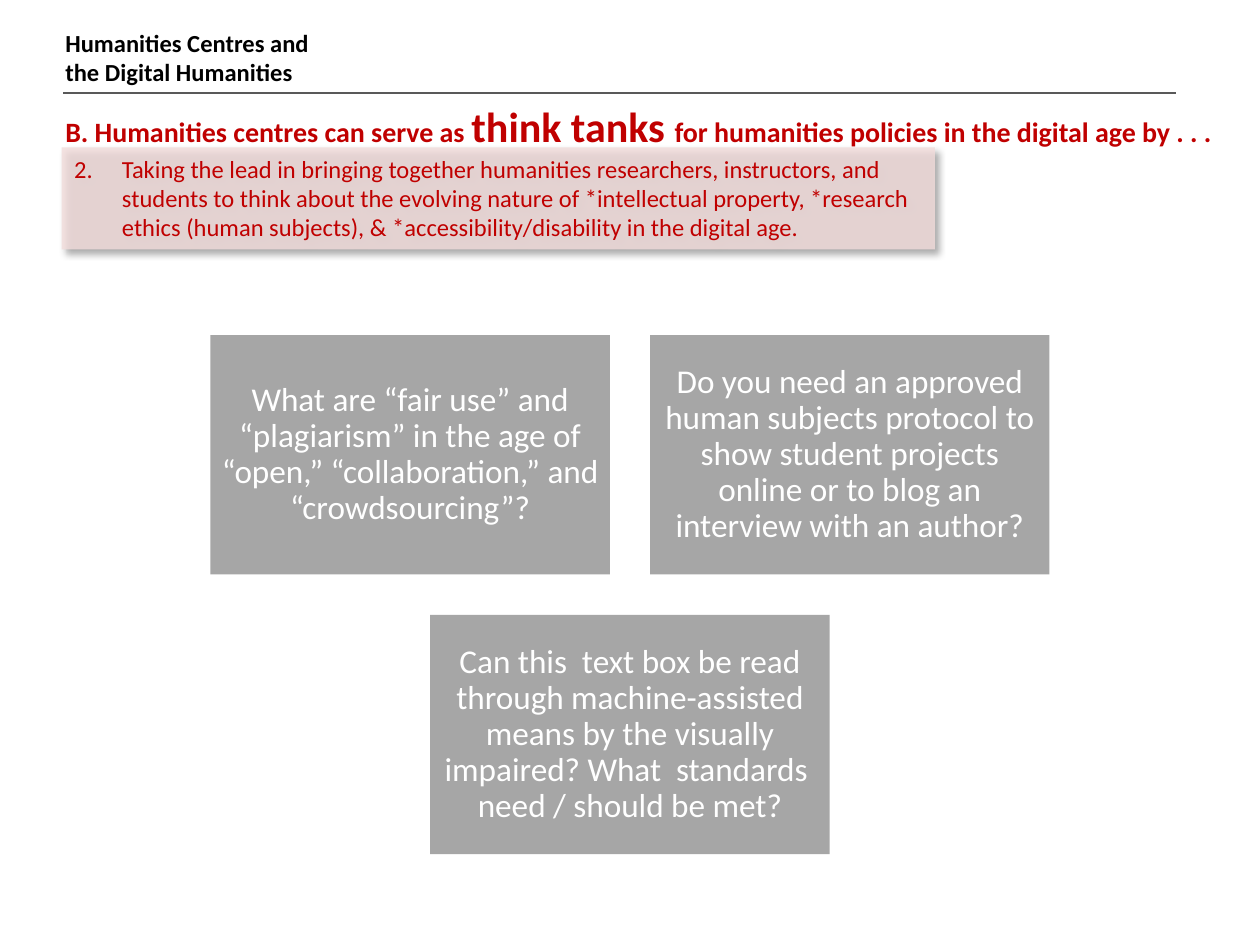
from lxml import etree
from pptx import Presentation
from pptx.dml.color import RGBColor
from pptx.enum.shapes import MSO_CONNECTOR, MSO_SHAPE
from pptx.enum.text import MSO_ANCHOR, MSO_AUTO_SIZE, PP_ALIGN
from pptx.oxml import parse_xml
from pptx.oxml.ns import nsdecls, qn
from pptx.util import Inches, Pt

BLACK, RED, WHITE = "000000", "C00000", "FFFFFF"
PINK, GREY, RULE_GREY = "F2DCDB", "A6A6A6", "595959"


def rgb(color):
    return RGBColor.from_string(color)


def write(shape, paragraphs, color, bold=False, wrap=True, inset=None,
          anchor=MSO_ANCHOR.TOP, align=PP_ALIGN.LEFT, spacing=None):
    """Fill a shape with paragraphs, each a list of (text, point size) runs."""
    frame = shape.text_frame
    frame.word_wrap = wrap
    frame.auto_size = MSO_AUTO_SIZE.NONE
    frame.vertical_anchor = anchor
    if inset is not None:
        frame.margin_left = frame.margin_right = Inches(inset)
        frame.margin_top = frame.margin_bottom = Inches(inset)
    for index, runs in enumerate(paragraphs):
        paragraph = frame.add_paragraph() if index else frame.paragraphs[0]
        paragraph.alignment = align
        paragraph.line_spacing = spacing
        for text, size in runs:
            run = paragraph.add_run()
            run.text = text
            run.font.name = "Calibri"
            run.font.size = Pt(size)
            run.font.bold = bold
            run.font.color.rgb = rgb(color)


prs = Presentation()
prs.slide_width, prs.slide_height = Inches(10), Inches(7.5)
slide = prs.slides.add_slide(prs.slide_layouts[6])
shapes = slide.shapes

# Running header and rule
header = shapes.add_textbox(Inches(0.42), Inches(0.17), Inches(2.19), Inches(0.57))
write(header, [[("Humanities Centres and", 14)], [("the Digital Humanities", 14)]],
      BLACK, bold=True, wrap=False)

rule = shapes.add_connector(MSO_CONNECTOR.STRAIGHT,
                            Inches(0.5), Inches(0.74), Inches(9.33), Inches(0.74))
rule.line.color.rgb = rgb(RULE_GREY)
rule.line.width = Pt(1)
etree.SubElement(rule._element.spPr, qn("a:effectLst"))

# Thesis and numbered point
thesis = shapes.add_textbox(Inches(0.42), Inches(0.75), Inches(9.41), Inches(0.5))
write(thesis, [[("B. Humanities centres can serve as ", 16),
                ("think tanks ", 24),
                ("for humanities policies in the digital age by . . .", 16)]],
      RED, bold=True, wrap=False)

point = shapes.add_shape(MSO_SHAPE.RECTANGLE,
                         Inches(0.49), Inches(1.17), Inches(6.93), Inches(0.81))
point.fill.solid()
point.fill.fore_color.rgb = rgb(PINK)
point.line.fill.background()
fill_color = point._element.spPr.find(".//" + qn("a:srgbClr"))
etree.SubElement(fill_color, qn("a:alpha"), val="80000")
point._element.spPr.append(parse_xml(
    f'<a:effectLst {nsdecls("a")}>'
    f'<a:outerShdw blurRad="{Pt(4)}" dist="{Pt(3)}" dir="2700000" algn="tl" rotWithShape="0">'
    f'<a:srgbClr val="{BLACK}"><a:alpha val="40000"/></a:srgbClr>'
    '</a:outerShdw></a:effectLst>'))
write(point, [[("Taking the lead in bringing together humanities researchers, "
                "instructors, and students to think about the evolving nature of "
                "*intellectual property, *research ethics (human subjects), & "
                "*accessibility/disability in the digital age.", 14)]], RED)
numbering = point.text_frame.paragraphs[0]._p.get_or_add_pPr()
numbering.set("marL", str(Inches(0.38)))
numbering.set("indent", str(-Inches(0.38)))
etree.SubElement(numbering, qn("a:buFont"), typeface="+mj-lt")
etree.SubElement(numbering, qn("a:buAutoNum"), type="arabicPeriod", startAt="2")

# Question cards: two on top, one centred below
CARD_W, CARD_H, GAP, CARDS_TOP = 3.17, 1.9, 0.32, 2.66
question_rows = [
    ["What are “fair use” and “plagiarism” in the age of “open,” “collaboration,” "
     "and “crowdsourcing”?",
     "Do you need an approved human subjects protocol to show student projects "
     "online or to blog an interview with an author?"],
    ["Can this  text box be read through machine-assisted means by the visually "
     "impaired? What  standards  need / should be met?"],
]
for row, questions in enumerate(question_rows):
    row_width = len(questions) * (CARD_W + GAP) - GAP
    left = (10 - row_width) / 2
    top = CARDS_TOP + row * (CARD_H + GAP)
    for column, question in enumerate(questions):
        card = shapes.add_shape(MSO_SHAPE.RECTANGLE,
                                Inches(left + column * (CARD_W + GAP)), Inches(top),
                                Inches(CARD_W), Inches(CARD_H))
        card.shadow.inherit = False
        card.fill.solid()
        card.fill.fore_color.rgb = rgb(GREY)
        card.line.fill.background()
        write(card, [[(question, 19)]], WHITE, inset=0.08,
              anchor=MSO_ANCHOR.MIDDLE, align=PP_ALIGN.CENTER, spacing=0.9)

prs.save("out.pptx")
